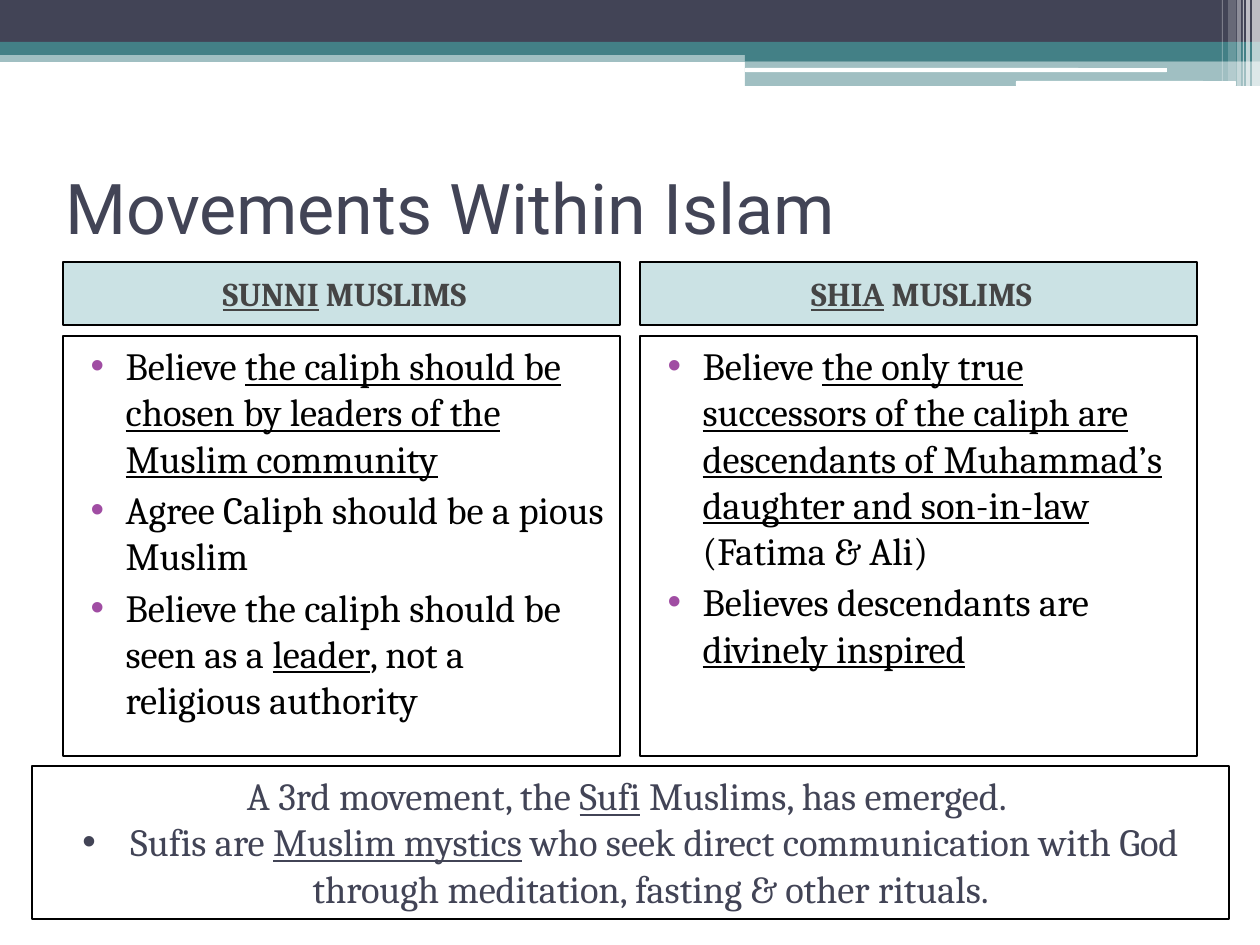
from pptx import Presentation
from pptx.dml.color import RGBColor
from pptx.enum.shapes import MSO_SHAPE
from pptx.enum.text import MSO_ANCHOR, MSO_AUTO_SIZE, PP_ALIGN
from pptx.oxml.ns import qn
from pptx.util import Pt
from lxml import etree

RECT, ROUND = MSO_SHAPE.RECTANGLE, MSO_SHAPE.ROUNDED_RECTANGLE
TOP, MID = MSO_ANCHOR.TOP, MSO_ANCHOR.MIDDLE
LEFT, MIDDLE = PP_ALIGN.LEFT, PP_ALIGN.CENTER
FIXED = MSO_AUTO_SIZE.NONE

NAVY = RGBColor(0x42, 0x44, 0x56)
TEAL = RGBColor(0x43, 0x80, 0x86)
AQUA = RGBColor(0x32, 0x8E, 0x97)
PLUM = RGBColor(0xA0, 0x4D, 0xA3)
GREY = RGBColor(0x45, 0x45, 0x45)
WHITE = RGBColor(0xFF, 0xFF, 0xFF)
BLACK = RGBColor(0, 0, 0)
SERIF, SANS = "Cambria", "Roboto"

TITLE = "Movements Within Islam"
SIDES = [
    ("_SUNNI_ MUSLIMS", [
        "Believe _the caliph should be chosen by leaders of the Muslim community_",
        "Agree Caliph should be a pious Muslim",
        "Believe the caliph should be seen as a _leader_, not a religious authority",
    ]),
    ("_SHIA_ MUSLIMS", [
        "Believe _the only true successors of the caliph are descendants of "
        "Muhammad’s daughter and son-in-law_ (Fatima & Ali)",
        "Believes descendants are _divinely inspired_",
    ]),
]
SUFI = [
    "A 3rd movement, the _Sufi_ Muslims, has emerged. ",
    "Sufis are _Muslim mystics_ who seek direct communication with God "
    "through meditation, fasting & other rituals. ",
]
BARS = [
    (RECT, 0, 50, 1260, 12, TEAL, 50),
    (RECT, 0, 0, 1260, 43, NAVY, 100),
    (RECT, 0, 42, 1260, 13, TEAL, 100),
    (RECT, 745, 49, 515, 12, TEAL, 100),
    (RECT, 745, 61, 515, 25, TEAL, 50),
    (ROUND, 745, 68, 422, 4, WHITE, 100),
    (ROUND, 1016, 81, 220, 5, WHITE, 100),
    (RECT, 1252, 0, 8, 86, WHITE, 65),
    (RECT, 1246, 0, 4, 86, WHITE, 65),
    (RECT, 1243, 0, 1, 86, WHITE, 60),
    (RECT, 1237, 0, 4, 86, WHITE, 40),
    (RECT, 1228, 0, 8, 81, WHITE, 20),
    (RECT, 1222, 0, 1, 81, WHITE, 30),
]


def px(n):
    return round(n * 914400 / 126)


def place(shape, x, y, w, h):
    shape.left, shape.top = px(x), px(y)
    shape.width, shape.height = px(w), px(h)


def paint(shape, color, alpha=100):
    shape.fill.solid()
    shape.fill.fore_color.rgb = color
    if alpha < 100:
        node = shape._element.spPr.find(".//" + qn("a:srgbClr"))
        etree.SubElement(node, qn("a:alpha"), val=str(alpha * 1000))


def frame(shape, width):
    shape.line.color.rgb = BLACK
    shape.line.width = Pt(width)


def indent(para, left, first=0):
    props = para._p.get_or_add_pPr()
    props.set("marL", str(px(left)))
    props.set("indent", str(px(first)))
    return props


def bullet(para, left, first, color):
    props = indent(para, left, first)
    tint = etree.SubElement(props, qn("a:buClr"))
    etree.SubElement(tint, qn("a:srgbClr"), val=str(color))
    etree.SubElement(props, qn("a:buFont"), typeface="Arial")
    etree.SubElement(props, qn("a:buChar"), char="•")


def write(shape, lines, size, color, face=SERIF, align=LEFT, anchor=TOP, gap=0, bold=False):
    text = shape.text_frame
    text.word_wrap = True
    text.auto_size = FIXED
    text.vertical_anchor = anchor
    for i, line in enumerate(lines):
        para = text.paragraphs[0] if i == 0 else text.add_paragraph()
        para.alignment = align
        para.space_before = Pt(gap)
        for j, part in enumerate(line.split("_")):
            if part:
                run = para.add_run()
                run.text = part
                font = run.font
                font.name, font.size, font.bold = face, Pt(size), bold
                font.color.rgb = color
                font.underline = j % 2 == 1
    return text.paragraphs


deck = Presentation()
deck.slide_width, deck.slide_height = px(1260), px(945)
slide = deck.slides.add_slide(deck.slide_layouts.get_by_name("Comparison"))
shapes = slide.shapes
title, *bodies = slide.placeholders

for i, (kind, x, y, w, h, color, alpha) in enumerate(BARS):
    bar = shapes.add_shape(kind, px(x), px(y), px(w), px(h))
    bar.shadow.inherit = False
    bar.line.fill.background()
    paint(bar, color, alpha)
    shapes._spTree.insert(2 + i, bar._element)

place(title, 53, 158, 1155, 147)
write(title, [TITLE], 40, NAVY, SANS)

for i, (name, points) in enumerate(SIDES):
    head, body = bodies[2 * i:2 * i + 2]
    x = 63 + 577 * i
    place(head, x, 262, 557, 63)
    paint(head, AQUA, 25)
    frame(head, 1)
    for para in write(head, [name], 19, GREY, align=MIDDLE, anchor=MID, gap=3, bold=True):
        indent(para, 6)
    place(body, x, 336, 557, 420)
    frame(body, 0.75)
    for para in write(body, points, 22, BLACK, gap=3):
        bullet(para, 50, -35, PLUM)

note = shapes.add_textbox(px(32), px(766), px(1197), px(153))
frame(note, 0.75)
paras = write(note, SUFI, 22, NAVY, align=MIDDLE)
bullet(paras[1], 48, -48, NAVY)

deck.save("out.pptx")
